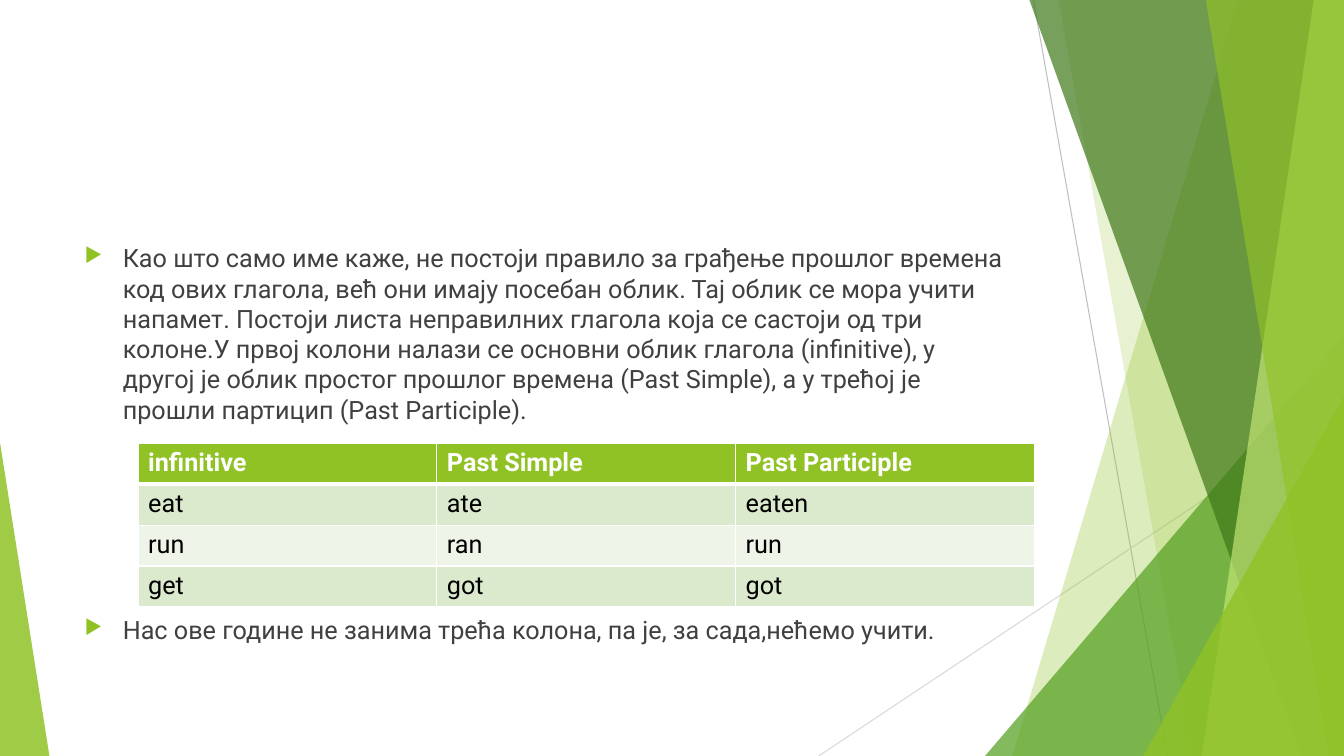
from lxml.etree import SubElement
from pptx import Presentation
from pptx.dml.color import RGBColor
from pptx.enum.shapes import MSO_CONNECTOR as CONN, MSO_SHAPE as SHAPE
from pptx.oxml.ns import qn
from pptx.util import Inches, Pt

W, H = 13.33, 7.5
FONT = "Roboto"
GREEN = "90C226"
INTRO = (
    "Као што само име каже, не постоји правило за грађење прошлог времена "
    "код ових глагола, већ они имају посебан облик. Тај облик се мора учити "
    "напамет. Постоји листа неправилних глагола која се састоји од три "
    "колоне.У првој колони налази се основни облик глагола (infinitive), у "
    "другој је облик простог прошлог времена (Past Simple), а у трећој је "
    "прошли партицип (Past Participle)."
)
CLOSING = "Нас ове године не занима трећа колона, па је, за сада,нећемо учити."
VERBS = [
    ("infinitive", "Past Simple", "Past Participle"),
    ("eat", "ate", "eaten"),
    ("run", "ran", "run"),
    ("get", "got", "got"),
]


def rgb(color):
    """Turn a hex string into a colour."""
    return RGBColor.from_string(color)


def paint(s, color, opacity):
    """Give a shape a see-through fill with no line or shadow."""
    s.shadow.inherit = False
    s.fill.solid()
    s.fill.fore_color.rgb = rgb(color)
    s.line.fill.background()
    clr = s.fill._xPr.find(qn("a:solidFill"))[0]
    SubElement(clr, qn("a:alpha"), val=str(opacity * 1000))


def add_line(slide, x1, y1, x2, y2, color):
    """Draw a thin straight line."""
    s = slide.shapes.add_connector(
        CONN.STRAIGHT, Inches(x1), Inches(y1), Inches(x2), Inches(y2))
    s.line.color.rgb = rgb(color)
    s.line.width = Pt(0.75)
    SubElement(s._element.spPr, qn("a:effectLst"))


def add_facet(slide, top_x, bottom_x, color, opacity):
    """Fill the area between a slanted edge and the right slide edge."""
    points = [(W, 0), (W, H), (bottom_x, H)]
    builder = slide.shapes.build_freeform(Inches(top_x), 0)
    builder.add_line_segments([(Inches(x), Inches(y)) for x, y in points])
    paint(builder.convert_to_shape(), color, opacity)


def add_corner(slide, x, width, height, apex, color, opacity):
    """Stand a triangle on the bottom edge of the slide."""
    s = slide.shapes.add_shape(
        SHAPE.ISOSCELES_TRIANGLE, Inches(x), Inches(H - height),
        Inches(width), Inches(height))
    s.adjustments[0] = apex
    paint(s, color, opacity)


def add_run(p, text, color, bold=False):
    """Add one formatted run to a paragraph."""
    r = p.add_run()
    r.text = text
    r.font.name = FONT
    r.font.size = Pt(18)
    r.font.bold = bold
    r.font.color.rgb = rgb(color)


def add_bullet(p, text, before):
    """Fill a paragraph with an arrow-bulleted text."""
    p.space_before = Pt(before)
    pPr = p._p.get_or_add_pPr()
    pPr.set("marL", str(Inches(0.38)))
    pPr.set("indent", str(-Inches(0.38)))
    SubElement(SubElement(pPr, qn("a:buClr")), qn("a:srgbClr"), val=GREEN)
    SubElement(pPr, qn("a:buSzPct"), val="80000")
    SubElement(pPr, qn("a:buChar"), char="▶")
    add_run(p, text, "404040")


def add_body(slide):
    """Add both bullets, leaving room between them for the table."""
    s = slide.shapes.add_textbox(
        Inches(0.74), Inches(2.36), Inches(9.4), Inches(4.24))
    tf = s.text_frame
    tf.word_wrap = True
    add_bullet(tf.paragraphs[0], INTRO, 10)
    add_bullet(tf.add_paragraph(), CLOSING, 136)


def set_border(cell, side, width):
    """Draw a white border on one side of a cell."""
    ln = SubElement(cell._tc.get_or_add_tcPr(), qn(f"a:ln{side}"),
                    w=str(Pt(width)))
    SubElement(SubElement(ln, qn("a:solidFill")), qn("a:srgbClr"),
               val="FFFFFF")


def add_verb_table(slide):
    """Add the table of irregular verbs."""
    rows, cols = len(VERBS), len(VERBS[0])
    table = slide.shapes.add_table(
        rows, cols, Inches(1.37), Inches(4.4), Inches(8.89),
        Inches(1.62)).table
    for i, forms in enumerate(VERBS):
        header = i == 0
        fill = GREEN if header else ("EEF4E8", "DBE9CD")[i % 2]
        for j, form in enumerate(forms):
            cell = table.cell(i, j)
            for side in "LRTB":
                thick = (i, side) in ((0, "B"), (1, "T"))
                set_border(cell, side, 3 if thick else 1)
            cell.fill.solid()
            cell.fill.fore_color.rgb = rgb(fill)
            add_run(cell.text_frame.paragraphs[0], form,
                    "FFFFFF" if header else "000000", header)


def add_backdrop(slide):
    """Draw the green facets and thin lines behind the content."""
    add_line(slide, 10.25, 0, 11.58, H, "BFBFBF")
    add_line(slide, W, 4.03, 8.12, H, "D9D9D9")
    add_facet(slide, 12.28, 10.04, GREEN, 30)
    add_facet(slide, 10.5, 11.83, GREEN, 20)
    add_corner(slide, 9.77, 3.56, 4.17, 1, "54A021", 72)
    add_facet(slide, 10.21, 12.91, "3F7819", 70)
    add_facet(slide, 13.03, 11.92, "C0E474", 70)
    add_facet(slide, 11.96, 13.18, GREEN, 65)
    add_corner(slide, 11.34, 1.99, 3.57, 1, GREEN, 80)
    add_corner(slide, 0, 0.49, 3.11, 0, GREEN, 85)


def main():
    """Build the slide and save it."""
    prs = Presentation()
    prs.slide_width, prs.slide_height = Inches(W), Inches(H)
    slide = prs.slides.add_slide(prs.slide_layouts[6])
    add_backdrop(slide)
    add_body(slide)
    add_verb_table(slide)
    prs.save("out.pptx")


if __name__ == "__main__":
    main()
